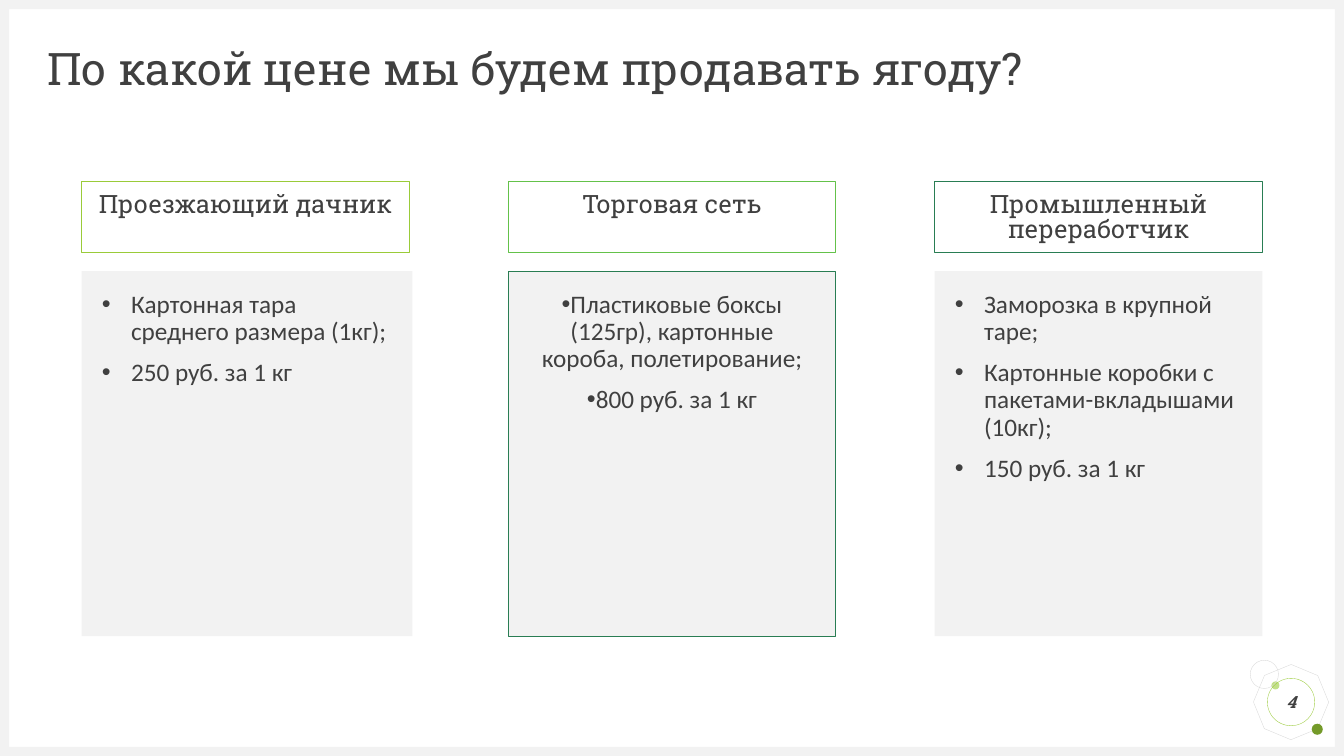
from dataclasses import dataclass

from lxml import etree
from pptx import Presentation
from pptx.dml.color import RGBColor
from pptx.enum.shapes import MSO_SHAPE as Shape
from pptx.enum.text import MSO_ANCHOR as Anchor, PP_ALIGN as Align
from pptx.oxml.ns import qn
from pptx.util import Inches, Pt

SLAB, SANS = "Roboto Slab", "Calibri"
INK, PALE, GREY, LIME = "404040", "F2F2F2", "D9D9D9", "9ACB39"


@dataclass
class Buyer:
    name: str
    color: str
    terms: list[str]
    wide: float = 3.25
    edge: str | None = None
    align: Align = Align.LEFT
    hang: float = 0.29


@dataclass
class Mark:
    kind: Shape
    box: tuple[float, float, float, float]
    fill: str | None = None
    line: str | None = None
    turn: float = 0


BUYERS = [
    Buyer("Проезжающий дачник", LIME,
          ["Картонная тара среднего размера (1кг);", "250 руб. за 1 кг"],
          wide=3.28),
    Buyer("Торговая сеть", "64C24A",
          ["Пластиковые боксы (125гр), картонные короба, полетирование;",
           "800 руб. за 1 кг"],
          edge="297D53", align=Align.CENTER, hang=0),
    Buyer("Промышленный переработчик", "297D53",
          ["Заморозка в крупной таре;",
           "Картонные коробки с пакетами-вкладышами (10кг);",
           "150 руб. за 1 кг"]),
]

MARKS = [
    Mark(Shape.OCTAGON, (12.46, 6.62, 0.69, 0.69), line=GREY, turn=22.7),
    Mark(Shape.OVAL, (12.61, 6.76, 0.08, 0.08), fill="C2E088"),
    Mark(Shape.OVAL, (13.01, 7.18, 0.11, 0.11), fill="749A29"),
    Mark(Shape.OVAL, (12.4, 6.55, 0.28, 0.28), line=GREY),
    # Frame: bottom, top, left, right
    Mark(Shape.RECTANGLE, (0, 7.41, 13.33, 0.09), fill=PALE),
    Mark(Shape.RECTANGLE, (0, 0, 13.33, 0.09), fill=PALE),
    Mark(Shape.RECTANGLE, (0, 0, 0.09, 7.5), fill=PALE),
    Mark(Shape.RECTANGLE, (13.24, 0, 0.09, 7.5), fill=PALE),
]


def rgb(code: str) -> RGBColor:
    return RGBColor.from_string(code)


def draw(slide, kind: Shape, box: tuple, fill: str | None = None,
         line: str | None = None, width: float = 0.25, turn: float = 0):
    shape = slide.shapes.add_shape(kind, *map(Inches, box))
    shape.shadow.inherit = False
    shape.rotation = turn
    if fill:
        shape.fill.solid()
        shape.fill.fore_color.rgb = rgb(fill)
    else:
        shape.fill.background()
    if line:
        shape.line.color.rgb = rgb(line)
        shape.line.width = Pt(width)
    else:
        shape.line.fill.background()
    return shape


def write(shape, lines: list[str], font: str = SLAB, size: float = 18,
          align: Align = Align.CENTER, anchor: Anchor = Anchor.TOP,
          inset: tuple = (0, 0, 0, 0), lead: float = 0.9, before: float = 0,
          strong: bool = False, hang: float | None = None) -> None:
    """Fill a shape with paragraphs; hang turns bullets on."""
    frame = shape.text_frame
    frame.word_wrap = True
    frame.vertical_anchor = anchor
    (frame.margin_left, frame.margin_top,
     frame.margin_right, frame.margin_bottom) = map(Inches, inset)
    for i, line in enumerate(lines):
        para = frame.add_paragraph() if i else frame.paragraphs[0]
        para.alignment = align
        para.line_spacing = lead
        para.space_before = Pt(before)
        run = para.add_run()
        run.text = line
        run.font.name = font
        run.font.size = Pt(size)
        run.font.bold = run.font.italic = strong
        run.font.color.rgb = rgb(INK)
        if hang is not None:
            props = para._p.get_or_add_pPr()
            props.set("marL", str(Inches(hang)))
            props.set("indent", str(-Inches(hang)))
            etree.SubElement(props, qn("a:buFont")).set("typeface", "Arial")
            etree.SubElement(props, qn("a:buChar")).set("char", "•")


def main() -> None:
    deck = Presentation()
    deck.slide_width, deck.slide_height = Inches(13.33), Inches(7.5)
    slide = deck.slides.add_slide(deck.slide_layouts[5])

    # Frame and corner ornament
    for mark in MARKS:
        draw(slide, mark.kind, mark.box, mark.fill, mark.line, turn=mark.turn)

    # Title
    title = slide.shapes.title
    title.left, title.top = Inches(0.47), Inches(0.47)
    title.width, title.height = Inches(12.4), Inches(0.47)
    write(title, ["По какой цене мы будем продавать ягоду?"], size=32,
          align=Align.LEFT, anchor=Anchor.MIDDLE)

    # One column per buyer
    for i, buyer in enumerate(BUYERS):
        left = 0.81 + 4.23 * i
        head = draw(slide, Shape.RECTANGLE, (left, 1.8, 3.25, 0.71),
                    line=buyer.color, width=0.75)
        write(head, [buyer.name], inset=(0, 0.12, 0, 0), lead=0.82)
        body = draw(slide, Shape.RECTANGLE, (left, 2.69, buyer.wide, 3.62),
                    fill=PALE, line=buyer.edge, width=0.75)
        write(body, buyer.terms, font=SANS, align=buyer.align, before=10,
              inset=(0.2, 0.2, 0.2, 0), hang=buyer.hang)

    # Slide number
    badge = draw(slide, Shape.OVAL, (12.57, 6.73, 0.47, 0.47), line=LIME)
    write(badge, ["4"], size=12, anchor=Anchor.MIDDLE, lead=1.0, strong=True)

    deck.save("out.pptx")


if __name__ == "__main__":
    main()
